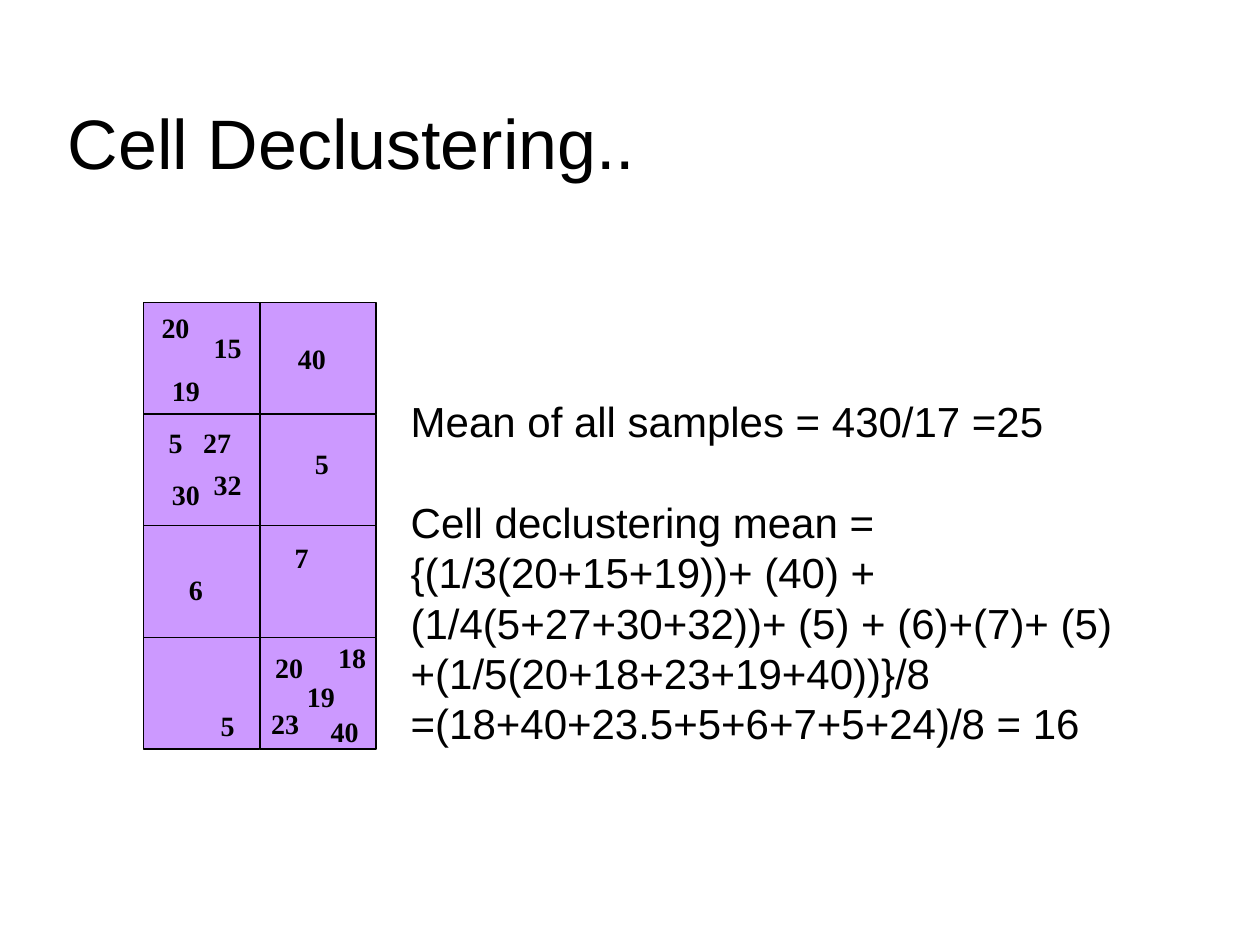
import pptx
import pptx.util
import pptx.dml.color
import pptx.enum.shapes
import pptx.enum.text

Cm, Pt = pptx.util.Cm, pptx.util.Pt
ANCHOR = pptx.enum.text.MSO_ANCHOR
COLORS = {"ink": "000000", "cell": "CC99FF"}
COLUMNS, ROWS = 2, 4
CELL_WIDTH, CELL_HEIGHT = 2.34, 2.25
GRID_LEFT, GRID_TOP = 2.9, 6.1
SAMPLES = [
    ("20", 3.12, 6.27), ("15", 4.17, 6.68), ("19", 3.33, 7.54),
    ("40", 5.87, 6.91),
    ("27", 3.96, 8.59), ("5", 3.12, 8.59), ("30", 3.33, 9.65), ("32", 4.17, 9.45),
    ("5", 6.07, 9.02),
    ("6", 3.53, 11.56),
    ("5", 4.17, 14.3),
    ("7", 5.66, 10.92),
    ("18", 6.68, 12.93), ("20", 5.41, 13.13), ("19", 6.05, 13.72),
    ("40", 6.53, 14.43), ("23", 5.33, 14.27),
]
MEANS = [
    "Mean of all samples = 430/17 =25",
    "Cell declustering mean =",
    "{(1/3(20+15+19))+ (40) + (1/4(5+27+30+32))+ (5) + (6)+(7)+ (5) "
    "+(1/5(20+18+23+19+40))}/8\v=(18+40+23.5+5+6+7+5+24)/8 = 16",
]


class SlideBuilder:
    """Draws styled elements on the current slide."""

    def __init__(self, slide):
        self.slide = slide
        self.grid = slide.shapes.add_group_shape()

    def color(self, name):
        return pptx.dml.color.RGBColor.from_string(COLORS[name])

    def style(self, paragraph, font_name, size, bold=False):
        font = paragraph.font
        font.name, font.size, font.bold = font_name, Pt(size), bold
        font.color.rgb = self.color("ink")

    def rectangle(self, left, top, width, height):
        rectangle = self.grid.shapes.add_shape(
            pptx.enum.shapes.MSO_SHAPE.RECTANGLE,
            Cm(left), Cm(top), Cm(width), Cm(height))
        rectangle.shadow.inherit = False
        rectangle.fill.solid()
        rectangle.fill.fore_color.rgb = self.color("cell")
        return rectangle

    def cell(self, column, row):
        cell = self.rectangle(GRID_LEFT + column * CELL_WIDTH,
                              GRID_TOP + row * CELL_HEIGHT,
                              CELL_WIDTH, CELL_HEIGHT)
        cell.line.color.rgb = self.color("ink")
        cell.line.width = Pt(0.75)

    def sample(self, value, left, top):
        sample = self.rectangle(left, top, 0.84, 0.64)
        sample.line.fill.background()
        frame = sample.text_frame
        frame.word_wrap = False
        frame.vertical_anchor = ANCHOR.MIDDLE
        paragraph = frame.paragraphs[0]
        paragraph.text = value
        paragraph.alignment = pptx.enum.text.PP_ALIGN.CENTER
        self.style(paragraph, "Times New Roman", 16, bold=True)

    def text(self, lines, left, top, width, height, size,
             anchor=ANCHOR.TOP, line_spacing=None, gap_before=None):
        frame = self.slide.shapes.add_textbox(
            Cm(left), Cm(top), Cm(width), Cm(height)).text_frame
        frame.word_wrap = True
        frame.vertical_anchor = anchor
        for index, line in enumerate(lines):
            paragraph = frame.add_paragraph() if index else frame.paragraphs[0]
            paragraph.text = line
            if line_spacing:
                paragraph.line_spacing = Pt(line_spacing)
            if index == gap_before:
                paragraph.space_before = Pt(line_spacing)
            self.style(paragraph, "Arial", size)


def main():
    presentation = pptx.Presentation()
    presentation.slide_width, presentation.slide_height = Cm(25.4), Cm(19.05)
    builder = SlideBuilder(
        presentation.slides.add_slide(presentation.slide_layouts[6]))
    builder.text(["Cell Declustering.."], 1.12, 0.64, 21.59, 3.18, 40,
                 anchor=ANCHOR.BOTTOM)
    for row in range(ROWS):
        for column in range(COLUMNS):
            builder.cell(column, row)
    for value, left, top in SAMPLES:
        builder.sample(value, left, top)
    builder.text(MEANS, 8.03, 7.85, 15.88, 7.37, 24,
                 line_spacing=28.8, gap_before=1)
    presentation.save("out.pptx")


if __name__ == "__main__":
    main()
